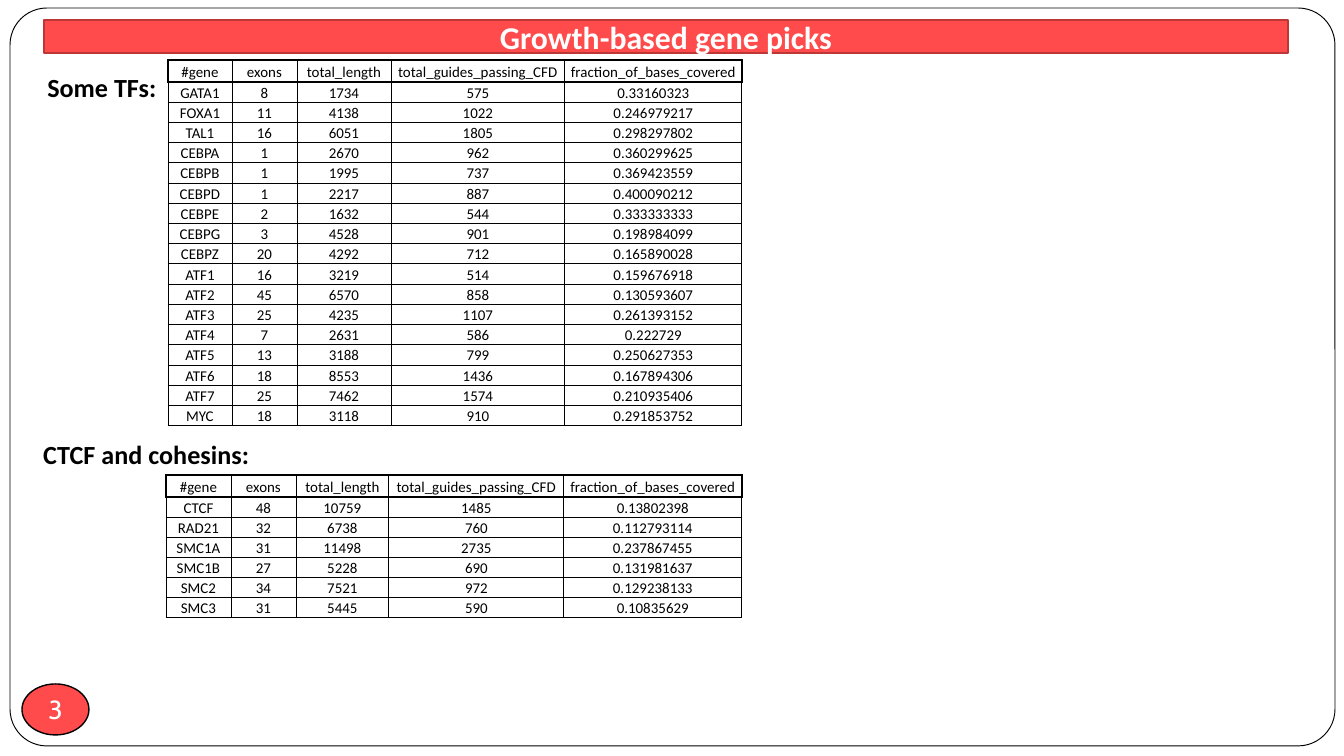
from dataclasses import dataclass
from lxml.etree import SubElement
from pptx import Presentation
from pptx.dml.color import RGBColor
from pptx.enum.shapes import MSO_SHAPE
from pptx.enum.text import MSO_ANCHOR, MSO_AUTO_SIZE, PP_ALIGN
from pptx.oxml import parse_xml
from pptx.oxml.ns import nsdecls, qn
from pptx.util import Pt


@dataclass
class Theme:
    red: str = "FF4B4B"
    edge: str = "BD3737"
    ink: str = "000000"
    paper: str = "FFFFFF"
    font: str = "Calibri"
    badge: str = "Cabin"
    title: int = 17
    label: int = 14
    cell: int = 8
    thin: float = 0.5
    thick: float = 1


theme = Theme()


def px(n):
    return round(n * 914400 / 134.4)


def write(frame, text, size, color, font=theme.font, bold=False, align=PP_ALIGN.CENTER):
    para = frame.paragraphs[0]
    para.alignment = align
    run = para.add_run()
    run.text = text
    run.font.name, run.font.size, run.font.bold = font, Pt(size), bold
    run.font.color.rgb = RGBColor.from_string(color)


deck = Presentation()
deck.slide_width, deck.slide_height = px(1344), px(756)
slide = deck.slides.add_slide(deck.slide_layouts[5])
shapes = slide.shapes

# Title bar
title = shapes.title
title.left, title.top, title.width, title.height = px(44), px(20), px(1244), px(33)
geom = SubElement(title.element.spPr, qn("a:prstGeom"), prst="roundRect")
SubElement(geom, qn("a:avLst"))
frame = title.text_frame
frame.auto_size = MSO_AUTO_SIZE.NONE
frame.vertical_anchor = MSO_ANCHOR.MIDDLE
write(frame, "Growth-based gene picks", theme.title, theme.paper, bold=True)

# Page border, behind the title, and slide number badge
border = shapes.add_shape(MSO_SHAPE.ROUNDED_RECTANGLE, px(10), px(8), px(1325), px(738))
border.adjustments[0] = 0.05
shapes.element.insert(2, border.element)

badge = shapes.add_shape(MSO_SHAPE.OVAL, px(22), px(684), px(67), px(51))
frame = badge.text_frame
frame.margin_left = frame.margin_right = frame.margin_top = frame.margin_bottom = 0
frame.word_wrap = False
frame.vertical_anchor = MSO_ANCHOR.MIDDLE
write(frame, "3", theme.label, theme.paper, theme.badge)

for shape, fill, line, width in (
    (title, theme.red, theme.edge, 1),
    (border, theme.paper, theme.ink, 0.5),
    (badge, theme.red, theme.ink, 0.75),
):
    shape.shadow.inherit = False
    shape.fill.solid()
    shape.fill.fore_color.rgb = RGBColor.from_string(fill)
    shape.line.color.rgb = RGBColor.from_string(line)
    shape.line.width = Pt(width)

# Section labels
for text, left, top in (("Some TFs:", 34, 65), ("CTCF and cohesins:", 30, 432)):
    box = shapes.add_textbox(px(left), px(top), px(1254), px(46))
    box.text_frame.word_wrap = True
    box.text_frame.auto_size = MSO_AUTO_SIZE.SHAPE_TO_FIT_TEXT
    write(box.text_frame, text, theme.label, theme.ink, bold=True, align=PP_ALIGN.LEFT)

# Gene tables
HEAD = ("#gene", "exons", "total_length", "total_guides_passing_CFD", "fraction_of_bases_covered")
factors = (
    ("GATA1", "8", "1734", "575", "0.33160323"),
    ("FOXA1", "11", "4138", "1022", "0.246979217"),
    ("TAL1", "16", "6051", "1805", "0.298297802"),
    ("CEBPA", "1", "2670", "962", "0.360299625"),
    ("CEBPB", "1", "1995", "737", "0.369423559"),
    ("CEBPD", "1", "2217", "887", "0.400090212"),
    ("CEBPE", "2", "1632", "544", "0.333333333"),
    ("CEBPG", "3", "4528", "901", "0.198984099"),
    ("CEBPZ", "20", "4292", "712", "0.165890028"),
    ("ATF1", "16", "3219", "514", "0.159676918"),
    ("ATF2", "45", "6570", "858", "0.130593607"),
    ("ATF3", "25", "4235", "1107", "0.261393152"),
    ("ATF4", "7", "2631", "586", "0.222729"),
    ("ATF5", "13", "3188", "799", "0.250627353"),
    ("ATF6", "18", "8553", "1436", "0.167894306"),
    ("ATF7", "25", "7462", "1574", "0.210935406"),
    ("MYC", "18", "3118", "910", "0.291853752"),
)
rings = (
    ("CTCF", "48", "10759", "1485", "0.13802398"),
    ("RAD21", "32", "6738", "760", "0.112793114"),
    ("SMC1A", "31", "11498", "2735", "0.237867455"),
    ("SMC1B", "27", "5228", "690", "0.131981637"),
    ("SMC2", "34", "7521", "972", "0.129238133"),
    ("SMC3", "31", "5445", "590", "0.10835629"),
)
TOP_ROW = 22

for genes, left, top, height, widths in (
    (factors, 168, 60, 366, (64, 65, 94, 174, 177)),
    (rings, 166, 475, 143, (65, 65, 93, 175, 178)),
):
    rows = (HEAD, *genes)
    table = shapes.add_table(
        len(rows), len(HEAD), px(left), px(top), px(sum(widths)), px(height)
    ).table
    table.first_row = table.horz_banding = False
    for col, width in zip(table.columns, widths):
        col.width = px(width)
    for r, row in enumerate(rows):
        table.rows[r].height = px((height - TOP_ROW) / len(genes) if r else TOP_ROW)
        for c, text in enumerate(row):
            cell = table.cell(r, c)
            cell.margin_left = cell.margin_right = cell.margin_top = px(1)
            cell.margin_bottom = 0
            cell.vertical_anchor = MSO_ANCHOR.BOTTOM
            cell.fill.background()
            write(cell.text_frame, text, theme.cell, theme.ink)
            heavy = {
                "L": r == 0 and c == 0,
                "R": r == 0 and c == len(HEAD) - 1,
                "T": r <= 1,
                "B": r == 0,
            }
            props = cell._tc.get_or_add_tcPr()
            for i, (side, bold) in enumerate(heavy.items()):
                width = Pt(theme.thick if bold else theme.thin)
                props.insert(i, parse_xml(
                    f'<a:ln{side} {nsdecls("a")} w="{width}"><a:solidFill>'
                    f'<a:srgbClr val="{theme.ink}"/></a:solidFill></a:ln{side}>'
                ))

deck.save("out.pptx")
